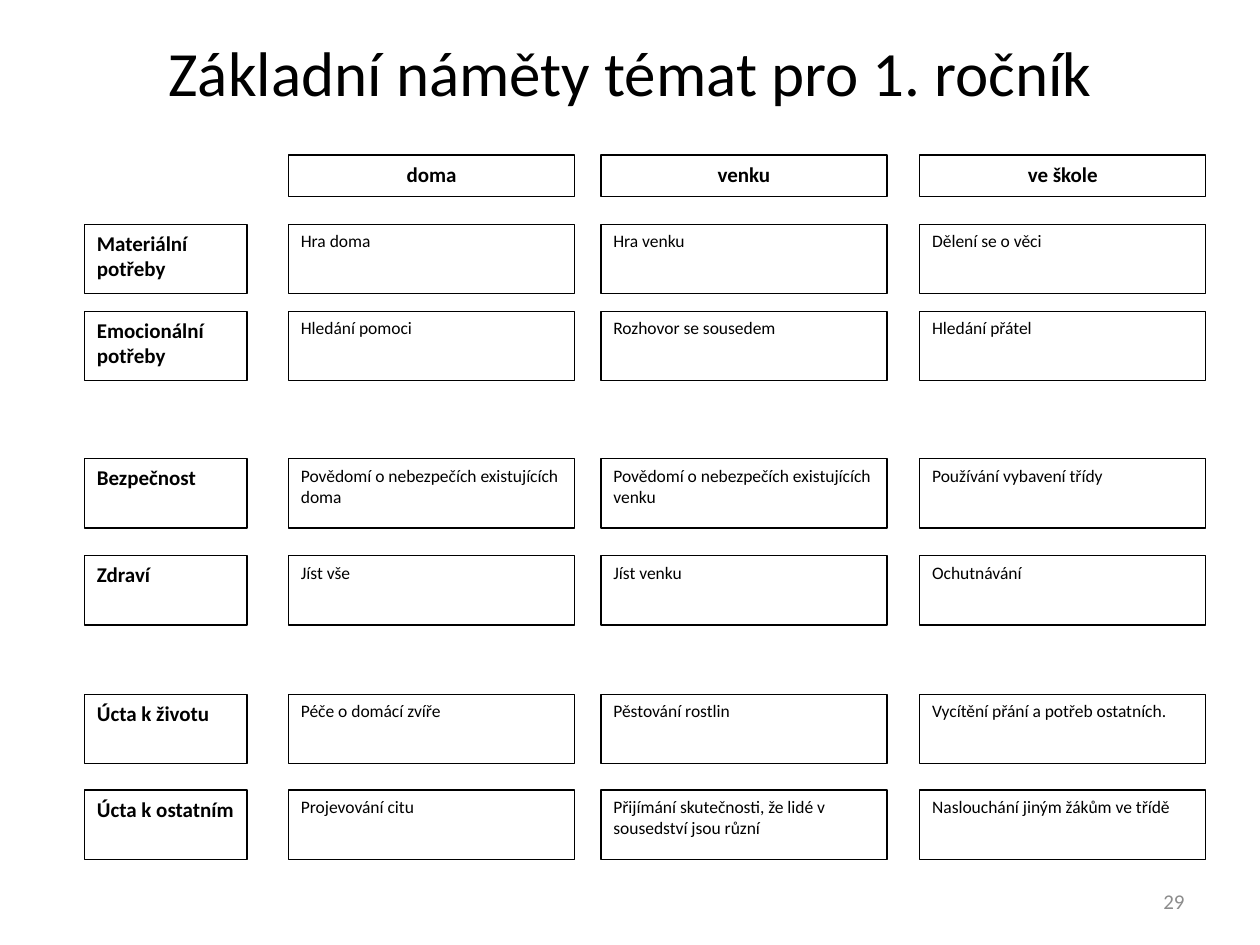
from pptx import Presentation
from pptx.dml.color import RGBColor
from pptx.enum.shapes import MSO_SHAPE
from pptx.enum.text import MSO_ANCHOR, PP_ALIGN
from pptx.util import Inches, Pt

BLACK = RGBColor(0x00, 0x00, 0x00)
WHITE = RGBColor(0xFF, 0xFF, 0xFF)
GREY = RGBColor(0x8C, 0x8C, 0x8C)

LABEL_X, LABEL_W = 0.67, 1.29
CELL_W, CELL_H = 2.27, 0.55
HEAD_Y, HEAD_H = 1.23, 0.33
COLS = [(2.29, "doma"), (4.77, "venku"), (7.3, "ve škole")]
ROWS = [
    (1.78, "Materiální potřeby",
     ["Hra doma", "Hra venku", "Dělení se o věci"]),
    (2.47, "Emocionální potřeby",
     ["Hledání pomoci", "Rozhovor se sousedem", "Hledání přátel"]),
    (3.64, "Bezpečnost",
     ["Povědomí o nebezpečích existujících doma",
      "Povědomí o nebezpečích existujících venku",
      "Používání vybavení třídy"]),
    (4.41, "Zdraví",
     ["Jíst vše", "Jíst venku", "Ochutnávání"]),
    (5.51, "Úcta k životu",
     ["Péče o domácí zvíře", "Pěstování rostlin",
      "Vycítění přání a potřeb ostatních."]),
    (6.27, "Úcta k ostatním",
     ["Projevování citu",
      "Přijímání skutečnosti, že lidé v sousedství jsou různí",
      "Naslouchání jiným žákům ve třídě"]),
]


class Deck:
    """Holds the text style and the current slide."""

    font = "Calibri"

    def __init__(self):
        self.prs = Presentation()
        self.prs.slide_width = Inches(10)
        self.prs.slide_height = Inches(7.5)
        self.slide = self.prs.slides.add_slide(self.prs.slide_layouts[6])

    def label(self, shape, text, size, align, anchor, bold=False, color=BLACK):
        frame = shape.text_frame
        frame.word_wrap = True
        frame.vertical_anchor = anchor
        para = frame.paragraphs[0]
        para.alignment = align
        run = para.add_run()
        run.text = text
        run.font.name = self.font
        run.font.size = Pt(size)
        run.font.bold = bold
        run.font.color.rgb = color

    def text(self, x, y, w, h, text, size, align, color=BLACK):
        box = self.slide.shapes.add_textbox(
            Inches(x), Inches(y), Inches(w), Inches(h))
        self.label(box, text, size, align, MSO_ANCHOR.MIDDLE, color=color)

    def box(self, x, y, w, h, text, size, align, bold=False):
        rect = self.slide.shapes.add_shape(
            MSO_SHAPE.RECTANGLE, Inches(x), Inches(y), Inches(w), Inches(h))
        rect.shadow.inherit = False
        rect.fill.solid()
        rect.fill.fore_color.rgb = WHITE
        rect.line.color.rgb = BLACK
        rect.line.width = Pt(0.75)
        self.label(rect, text, size, align, MSO_ANCHOR.TOP, bold)


def main():
    deck = Deck()
    deck.text(0.2, 0.3, 9.61, 0.54, "Základní náměty témat pro 1. ročník",
              36, PP_ALIGN.CENTER)
    for x, head in COLS:
        deck.box(x, HEAD_Y, CELL_W, HEAD_H, head, 12, PP_ALIGN.CENTER, True)
    for y, label, cells in ROWS:
        deck.box(LABEL_X, y, LABEL_W, CELL_H, label, 12, PP_ALIGN.JUSTIFY, True)
        for (x, _), cell in zip(COLS, cells):
            deck.box(x, y, CELL_W, CELL_H, cell, 10, PP_ALIGN.LEFT)
    deck.text(7.17, 6.95, 2.33, 0.4, "29", 12, PP_ALIGN.RIGHT, GREY)
    deck.prs.save("out.pptx")


if __name__ == "__main__":
    main()
